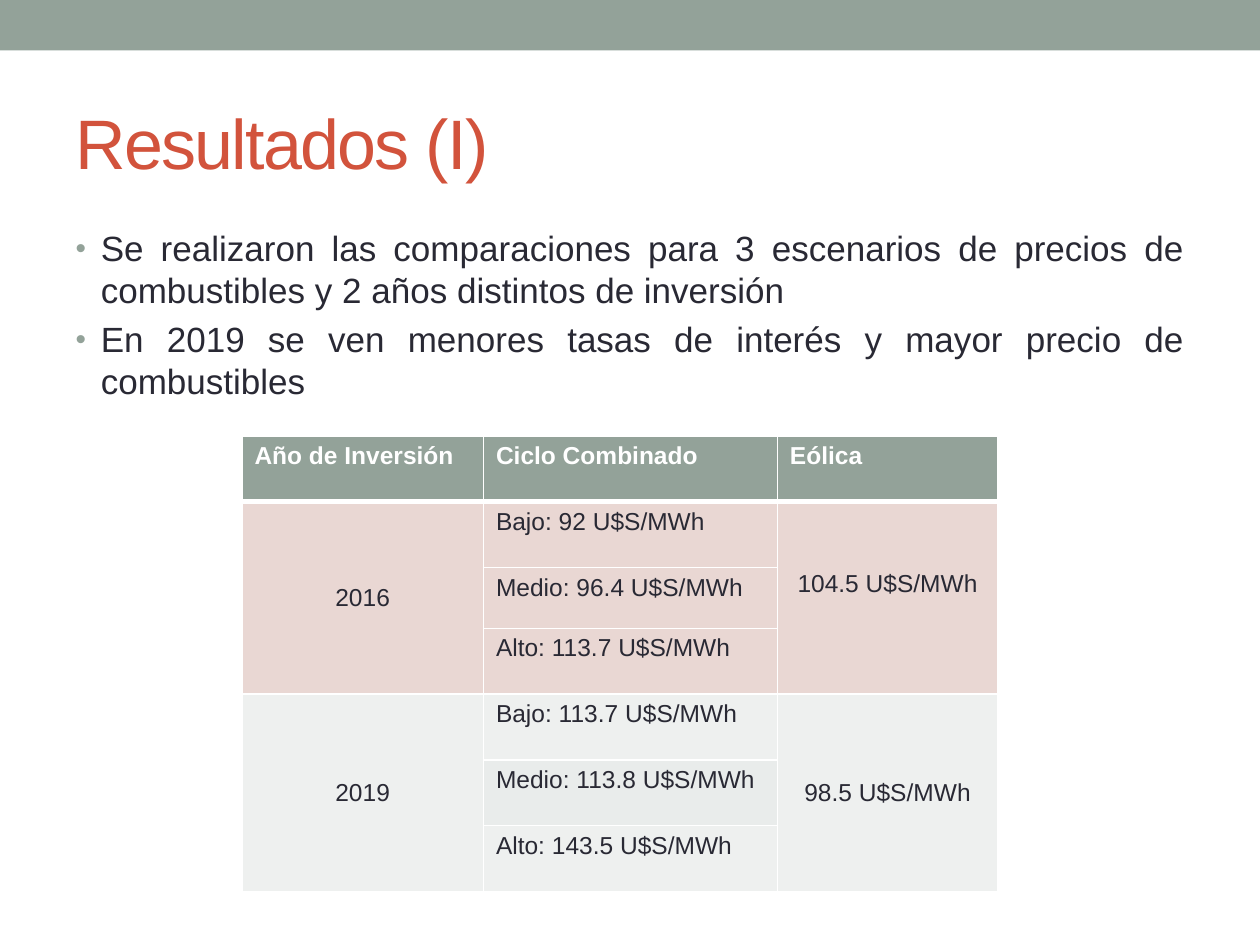
from lxml import etree
from pptx import Presentation
from pptx.dml.color import RGBColor
from pptx.enum import shapes, text
from pptx.oxml import ns
from pptx.util import Pt

COLORS = {"sage": "93A299", "rust": "D2533C", "ink": "292934", "white": "FFFFFF",
          "rose": "E9D7D3", "mist": "EEF0EF", "mist_dark": "E9ECEB"}
CENTER, JUSTIFY = text.PP_ALIGN.CENTER, text.PP_ALIGN.JUSTIFY
MIDDLE, TOP = text.MSO_ANCHOR.MIDDLE, text.MSO_ANCHOR.TOP

BULLETS = [
    "Se realizaron las comparaciones para 3 escenarios de precios de combustibles "
    "y 2 años distintos de inversión",
    "En 2019 se ven menores tasas de interés y mayor precio de combustibles",
]
HEADERS = ["Año de Inversión", "Ciclo Combinado", "Eólica"]
# Year, wind price, extra bottom margin of the wind cell, and (cost, fill) by scenario
YEARS = [
    ("2016", "104.5", 16, [("92", "rose"), ("96.4", "rose"), ("113.7", "rose")]),
    ("2019", "98.5", 0, [("113.7", "mist"), ("113.8", "mist_dark"), ("143.5", "mist")]),
]
SCENARIOS = ["Bajo", "Medio", "Alto"]
COL_WIDTHS = [138, 168, 126]
ROW_HEIGHTS = [37.6, 37.6, 34.8, 37.6, 37.6, 37.6, 37.6]


def rgb(name):
    return RGBColor.from_string(COLORS[name])


def add_xml(parent, tag, **attrs):
    return etree.SubElement(parent, ns.qn(tag), attrs)


def write(p, words, size=14, color="ink", bold=False, align=None, spacing=None):
    r = p.add_run()
    r.text = words
    r.font.name, r.font.size, r.font.bold = "Arial", Pt(size), bold
    r.font.color.rgb = rgb(color)
    if align is not None:
        p.alignment = align
    if spacing is not None:
        r.font._element.set("spc", str(spacing * 100))


def place(sp, left, top, width, height):
    sp.left, sp.top, sp.width, sp.height = Pt(left), Pt(top), Pt(width), Pt(height)


def add_band(s):
    sp = s.shapes.add_shape(shapes.MSO_SHAPE.RECTANGLE, 0, 0, Pt(720), Pt(28.8))
    sp.shadow.inherit = False
    sp.fill.solid()
    sp.fill.fore_color.rgb = rgb("sage")
    sp.line.fill.background()


def set_title(s, words):
    sp = s.shapes.title
    place(sp, 36, 42, 648, 78)
    tf = sp.text_frame
    tf.vertical_anchor = MIDDLE
    write(tf.paragraphs[0], words, size=40, color="rust",
          align=text.PP_ALIGN.LEFT, spacing=-1)


def set_bullets(s, lines):
    sp = s.placeholders[1]
    place(sp, 36, 126, 648, 384)
    tf = sp.text_frame
    for i, line in enumerate(lines):
        p = tf.add_paragraph() if i else tf.paragraphs[0]
        p.space_before = Pt(4)
        write(p, line, size=20, align=JUSTIFY)
        pPr = p._p.get_or_add_pPr()
        pPr.set("marL", str(Pt(14.4)))
        pPr.set("indent", str(Pt(-14.4)))
        add_xml(add_xml(pPr, "a:buClr"), "a:srgbClr", val=COLORS["sage"])
        add_xml(pPr, "a:buSzPct", val="85000")
        add_xml(pPr, "a:buFont", typeface="Arial")
        add_xml(pPr, "a:buChar", char="•")


def style_cell(cell, fill, bottom=1, top=1):
    tcPr = cell._tc.get_or_add_tcPr()
    for side, width in (("L", 1), ("R", 1), ("T", top), ("B", bottom)):
        ln = add_xml(tcPr, f"a:ln{side}", w=str(Pt(width)))
        add_xml(add_xml(ln, "a:solidFill"), "a:srgbClr", val=COLORS["white"])
    cell.fill.solid()
    cell.fill.fore_color.rgb = rgb(fill)


def fill_cell(cell, words, anchor=TOP, **fmt):
    cell.vertical_anchor = anchor
    write(cell.text_frame.paragraphs[0], words, **fmt)


def add_results(s):
    frame = s.shapes.add_table(len(ROW_HEIGHTS), len(COL_WIDTHS), Pt(138.24), Pt(249.1),
                               Pt(sum(COL_WIDTHS)), Pt(sum(ROW_HEIGHTS)))
    table = frame.table
    for col, width in zip(table.columns, COL_WIDTHS):
        col.width = Pt(width)
    for row, height in zip(table.rows, ROW_HEIGHTS):
        row.height = Pt(height)

    # Header row
    for c, words in enumerate(HEADERS):
        style_cell(table.cell(0, c), "sage", bottom=3)
        fill_cell(table.cell(0, c), words, color="white", bold=True)

    # One block of three scenarios per year
    for y, (year, wind, extra, costs) in enumerate(YEARS):
        first = 1 + y * len(SCENARIOS)
        for i, (scenario, (cost, fill)) in enumerate(zip(SCENARIOS, costs)):
            row = first + i
            for c, cell_fill in enumerate((costs[0][1], fill, costs[0][1])):
                style_cell(table.cell(row, c), cell_fill, top=3 if row == 1 else 1)
            fill_cell(table.cell(row, 1), f"{scenario}: {cost} U$S/MWh")
        for c, words in ((0, year), (2, f"{wind} U$S/MWh")):
            cell = table.cell(first, c)
            cell.merge(table.cell(first + len(SCENARIOS) - 1, c))
            fill_cell(cell, words, anchor=MIDDLE, align=CENTER)
        table.cell(first, 2).margin_bottom = Pt(3.6 + extra)


def main():
    prs = Presentation()
    prs.slide_width, prs.slide_height = Pt(720), Pt(540)
    s = prs.slides.add_slide(prs.slide_layouts[1])
    add_band(s)
    set_title(s, "Resultados (I)")
    set_bullets(s, BULLETS)
    add_results(s)
    prs.save("out.pptx")


if __name__ == "__main__":
    main()
